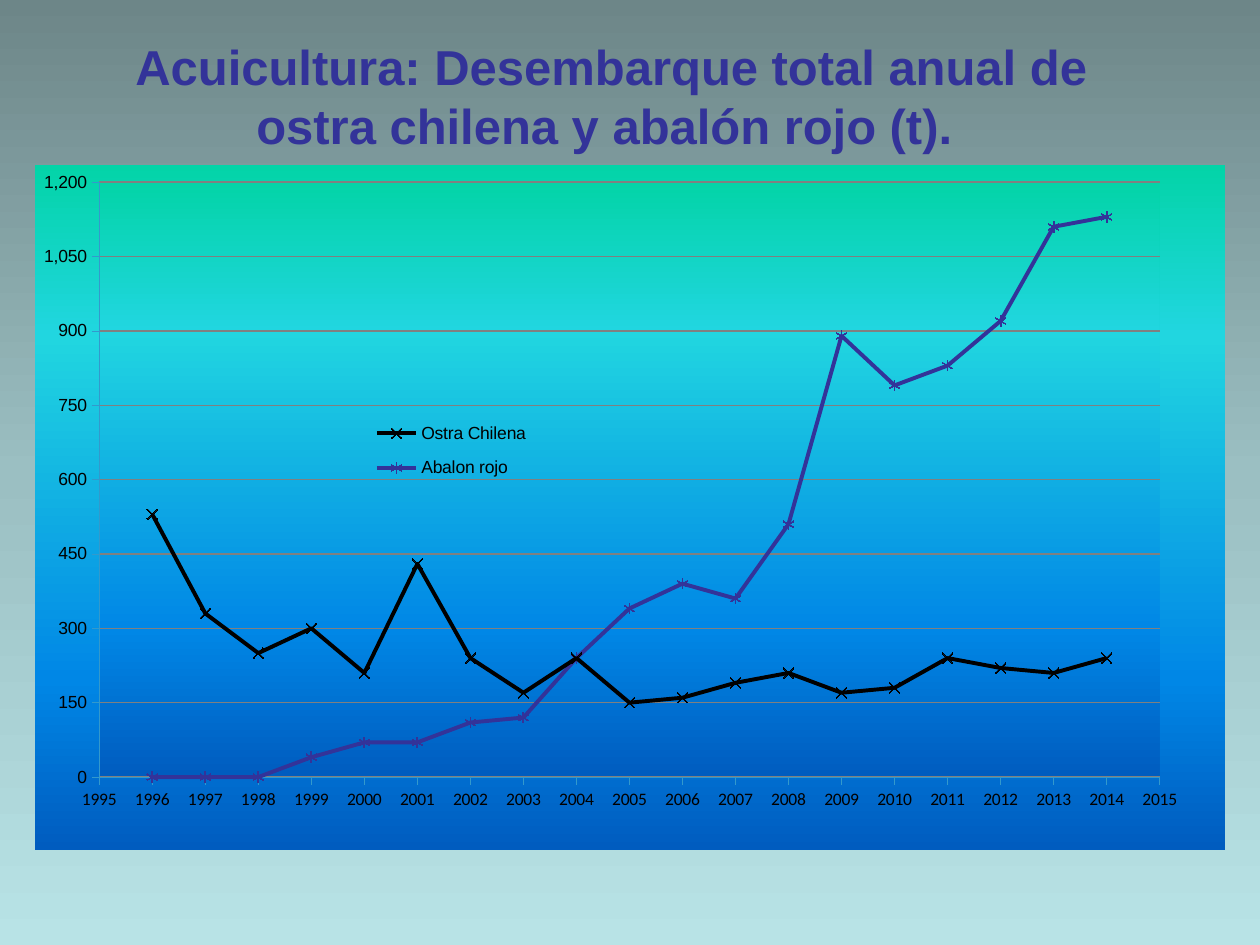
"""Build a slide with a scatter chart of yearly oyster and abalone landings."""
from lxml.etree import SubElement
from pptx import Presentation
from pptx.chart.data import XyChartData
from pptx.dml.color import RGBColor
from pptx.enum.chart import XL_CHART_TYPE, XL_LEGEND_POSITION, XL_MARKER_STYLE, XL_TICK_MARK
from pptx.enum.text import MSO_ANCHOR, PP_ALIGN
from pptx.oxml import parse_xml
from pptx.oxml.ns import nsdecls, qn
from pptx.util import Pt

COLORS = {"black": "000000", "indigo": "333399", "grid": "808080", "axis": "3399CC"}
SKY = [(0, "6D8688"), (50, "9BBFC2"), (100, "B8E3E6")]
OCEAN = [(0, "03D4A8"), (25, "21D6E0"), (75, "0087E6"), (100, "005CBF")]
CHART_WIDTH, CHART_HEIGHT = 680, 391
YEARS = range(1996, 2015)
SERIES = [
    ("Ostra Chilena", "black", XL_MARKER_STYLE.X,
     [530, 330, 250, 300, 210, 430, 240, 170, 240, 150,
      160, 190, 210, 170, 180, 240, 220, 210, 240]),
    ("Abalon rojo", "indigo", XL_MARKER_STYLE.STAR,
     [0, 0, 0, 40, 70, 70, 110, 120, 240, 340,
      390, 360, 510, 890, 790, 830, 920, 1110, 1130]),
]


def gradient_fill(stops):
    """Return a top-to-bottom gradient fill element."""
    stop_list = "".join(
        f'<a:gs pos="{position * 1000}"><a:srgbClr val="{color}"/></a:gs>'
        for position, color in stops)
    return parse_xml(
        f'<a:gradFill {nsdecls("a")} rotWithShape="1"><a:gsLst>{stop_list}</a:gsLst>'
        '<a:lin ang="5400000" scaled="0"/></a:gradFill>')


def write_text(text_frame, text, font="Arial", size=10, color="black", bold=False,
               align=PP_ALIGN.CENTER):
    """Write one formatted paragraph into a text frame."""
    paragraph = text_frame.paragraphs[0]
    paragraph.alignment = align
    run = paragraph.add_run()
    run.text = text
    run.font.name = font
    run.font.size = Pt(size)
    run.font.bold = bold
    run.font.color.rgb = RGBColor.from_string(COLORS[color])


presentation = Presentation()
presentation.slide_width, presentation.slide_height = Pt(720), Pt(540)
slide = presentation.slides.add_slide(presentation.slide_layouts[5])
background = slide.background.fill
background.solid()
solid = next(slide.element.iter(qn("a:solidFill")))
solid.getparent().replace(solid, gradient_fill(SKY))

chart_data = XyChartData(number_format="#,##0")
for name, color, marker, landings in SERIES:
    data_series = chart_data.add_series(name)
    for year, tonnes in zip(YEARS, landings):
        data_series.add_data_point(year, tonnes)
chart_shape = slide.shapes.add_chart(
    XL_CHART_TYPE.XY_SCATTER_LINES, Pt(20), Pt(94.5), Pt(CHART_WIDTH), Pt(CHART_HEIGHT),
    chart_data)
chart = chart_shape.chart
chart.has_title = False
chart.font.name = "Arial"
chart.font.size = Pt(10)
chart.font.color.rgb = RGBColor.from_string(COLORS["black"])

for series, (name, color, marker, landings) in zip(chart.plots[0].series, SERIES):
    series_color = RGBColor.from_string(COLORS[color])
    series.smooth = False
    series.format.line.width = Pt(2.25)
    series.format.line.color.rgb = series_color
    series.marker.style = marker
    series.marker.size = 6
    series.marker.format.fill.background()
    series.marker.format.line.width = Pt(0.75)
    series.marker.format.line.color.rgb = series_color

axes = [(chart.category_axis, 1995, 2015, 1, "0", "Calibri"),
        (chart.value_axis, 0, 1200, 150, "#,##0", "Arial")]
for axis, minimum, maximum, step, number_format, font in axes:
    axis.minimum_scale, axis.maximum_scale, axis.major_unit = minimum, maximum, step
    axis.major_tick_mark = XL_TICK_MARK.OUTSIDE
    axis.minor_tick_mark = XL_TICK_MARK.NONE
    axis.has_major_gridlines = axis is axes[1][0]
    axis.tick_labels.number_format = number_format
    axis.tick_labels.number_format_is_linked = False
    axis.tick_labels.font.name = font
    axis.tick_labels.font.size = Pt(10)
    axis.tick_labels.font.color.rgb = RGBColor.from_string(COLORS["black"])
    axis.format.line.width = Pt(0.25)
    axis.format.line.color.rgb = RGBColor.from_string(COLORS["axis"])
gridlines = chart.value_axis.major_gridlines.format.line
gridlines.width = Pt(0.75)
gridlines.color.rgb = RGBColor.from_string(COLORS["grid"])

chart.has_legend = True
chart.legend.position = XL_LEGEND_POSITION.RIGHT
chart.legend.include_in_layout = False
plot_area = chart.element.find(".//" + qn("c:plotArea"))
legend = chart.element.find(".//" + qn("c:legend"))
layouts = [(plot_area, "inner", (36.7, 9.6, 606, 340)),
           (legend, None, (190.4, 139, 95, 48))]
for parent, target, (left, top, width, height) in layouts:
    for old_layout in parent.findall(qn("c:layout")):
        parent.remove(old_layout)
    layout = parse_xml(f'<c:layout {nsdecls("c")}/>')
    manual = SubElement(layout, qn("c:manualLayout"))
    settings = [("layoutTarget", target)] if target else []
    settings += [("xMode", "edge"), ("yMode", "edge"),
                 ("x", left / CHART_WIDTH), ("y", top / CHART_HEIGHT),
                 ("w", width / CHART_WIDTH), ("h", height / CHART_HEIGHT)]
    for tag, value in settings:
        SubElement(manual, qn(f"c:{tag}")).set("val", str(value))
    if parent is plot_area:
        parent.insert(0, layout)
    else:
        parent.find(qn("c:legendPos")).addnext(layout)

plot_properties = SubElement(plot_area, qn("c:spPr"))
plot_properties.append(gradient_fill(OCEAN))
chart_properties = parse_xml(f'<c:spPr {nsdecls("c", "a")}/>')
chart_properties.append(gradient_fill(OCEAN))
SubElement(SubElement(chart_properties, qn("a:ln")), qn("a:noFill"))
chart.element.find(qn("c:chart")).addnext(chart_properties)

title = slide.shapes.title
title.left, title.top, title.width, title.height = Pt(42.5), Pt(14.5), Pt(613.5), Pt(80)
title.text_frame.vertical_anchor = MSO_ANCHOR.MIDDLE
title.text_frame.word_wrap = True
write_text(title.text_frame,
           "Acuicultura: Desembarque total anual de ostra chilena y abalón rojo (t). ",
           size=28, color="indigo", bold=True)
chart_shape.element.addnext(title.element)

presentation.save("out.pptx")
